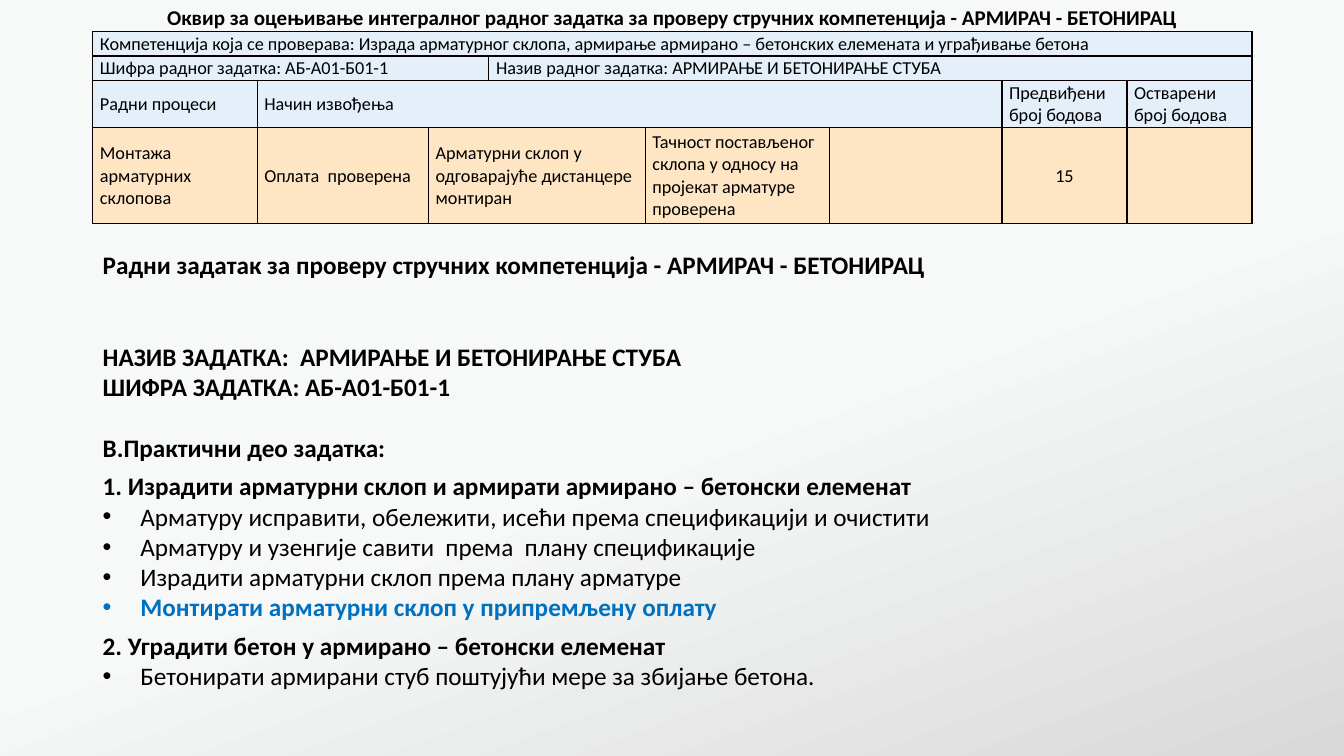
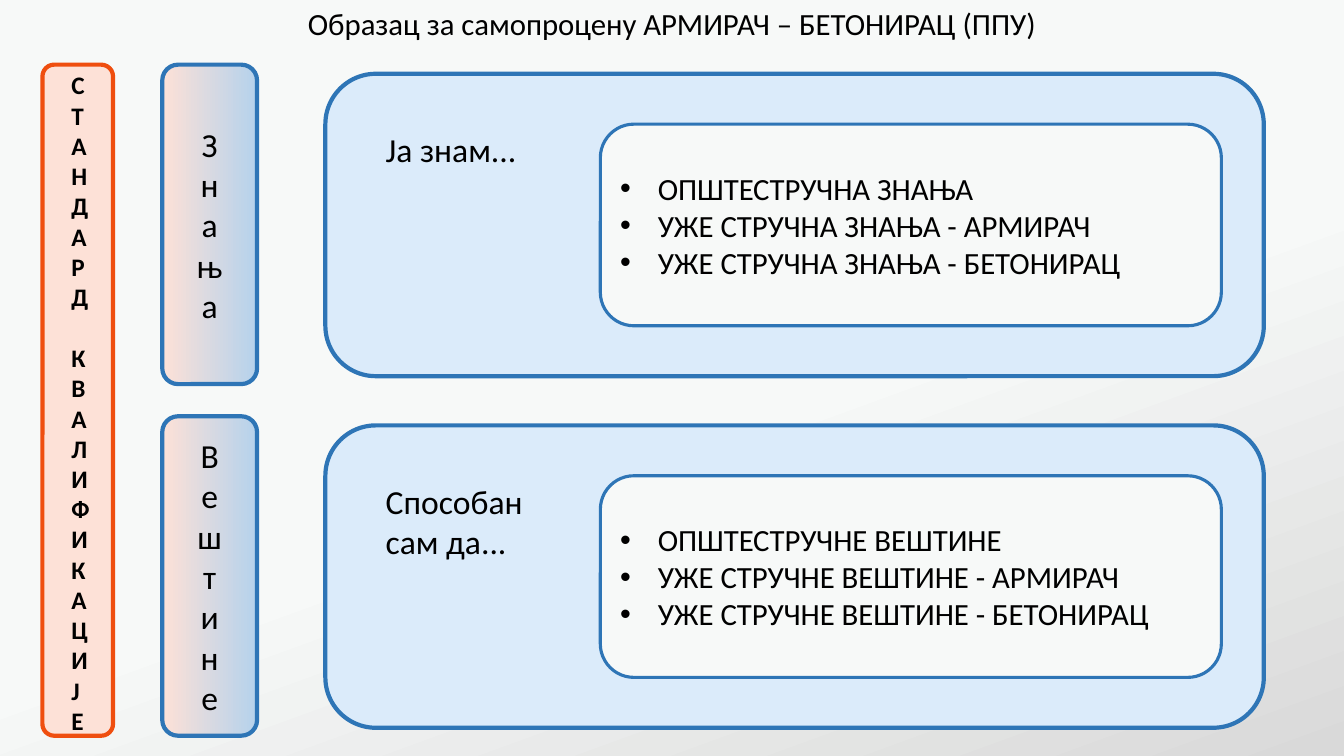
from lxml import etree
from pptx import Presentation
from pptx.dml.color import RGBColor
from pptx.enum.shapes import MSO_SHAPE as Shape
from pptx.enum.text import MSO_ANCHOR as Anchor, PP_ALIGN as Align
from pptx.oxml.ns import qn
from pptx.util import Cm, Pt

FONT = "Calibri"
COLORS = {
    "text": "000000", "highlight": "0070C0", "border": "080000",
    "back_dark": "D9D9D9", "back_light": "F7F9F8",
    "header": "E4EFF9", "process": "FEE6C5",
    "panel": "DBEBFA", "line": "2E75B6",
    "standard": "FDE1D7", "standard_line": "EF4E0F", "pillar_end": "B5D2EC",
}
SLIDE_WIDTH, SLIDE_HEIGHT = 33.87, 19.05
BULLET_INDENT = 0.95


# Shared helpers
def color(name):
    return RGBColor.from_string(COLORS[name])


def set_gradient(fill, stops, angle):
    fill.gradient()
    fill.gradient_angle = angle
    for stop, (name, position) in zip(fill.gradient_stops, stops):
        stop.color.rgb = color(name)
        stop.position = position


def add_slide(presentation):
    slide = presentation.slides.add_slide(presentation.slide_layouts[6])
    set_gradient(slide.background.fill,
                 [("back_dark", 0), ("back_light", 0.45)], 110)
    return slide


def format_paragraph(paragraph, size, bold=False, font_color="text",
                     align=Align.LEFT):
    paragraph.alignment = align
    for run in paragraph.runs:
        font = run.font
        font.name, font.size, font.bold = FONT, Pt(size), bold
        font.color.rgb = color(font_color)


def format_frame(frame, size, **style):
    frame.word_wrap = True
    for paragraph in frame.paragraphs:
        format_paragraph(paragraph, size, **style)


def add_bullet(paragraph):
    properties = paragraph._p.get_or_add_pPr()
    properties.set("marL", str(Cm(BULLET_INDENT)))
    properties.set("indent", str(-Cm(BULLET_INDENT)))
    etree.SubElement(properties, qn("a:buFont"), typeface="Arial")
    etree.SubElement(properties, qn("a:buChar"), char="•")


def add_text(slide, box, text, size, **style):
    frame = slide.shapes.add_textbox(*map(Cm, box)).text_frame
    frame.text = text
    format_frame(frame, size, **style)
    return frame


def add_box(slide, box, fill, line="line", line_width=3):
    shape = slide.shapes.add_shape(Shape.ROUNDED_RECTANGLE, *map(Cm, box))
    shape.shadow.inherit = False
    shape.fill.solid()
    shape.fill.fore_color.rgb = color(fill)
    shape.line.color.rgb = color(line)
    shape.line.width = Pt(line_width)
    shape.text_frame.vertical_anchor = Anchor.MIDDLE
    return shape


# Slide 1: assessment table
COLUMN_WIDTHS = [4.14, 4.32, 1.52, 3.94, 4.65, 4.34, 3.15, 3.15]
ROW_HEIGHTS = [0.65, 0.61, 0.61, 1.2, 2.42]
# Each cell: text, number of columns
TABLE_ROWS = [
    [("Оквир за оцењивање интегралног радног задатка за проверу стручних "
      "компетенција - АРМИРАЧ - БЕТОНИРАЦ", 8)],
    [("Компетенција која се проверава: Израда арматурног склопа, армирање "
      "армирано – бетонских елемената и уграђивање бетона", 8)],
    [("Шифра радног задатка: АБ-А01-Б01-1", 3),
     ("Назив радног задатка: АРМИРАЊЕ И БЕТОНИРАЊЕ СТУБА", 5)],
    [("Радни процеси", 1), ("Начин извођења", 5),
     ("Предвиђени број бодова", 1), ("Остварени број бодова", 1)],
    [("Монтажа арматурних склопова", 1), ("Оплата  проверена", 1),
     ("Арматурни склоп у одговарајуће дистанцере монтиран", 2),
     ("Тачност постављеног склопа у односу на пројекат арматуре проверена", 1),
     ("", 1), ("15", 1), ("", 1)],
]


def set_borders(cell, visible_sides):
    properties = cell._tc.get_or_add_tcPr()
    for side in "LRTB":
        line = etree.SubElement(properties, qn(f"a:ln{side}"), w=str(Pt(1)))
        if side in visible_sides:
            fill = etree.SubElement(line, qn("a:solidFill"))
            etree.SubElement(fill, qn("a:srgbClr"), val=COLORS["border"])
        else:
            etree.SubElement(line, qn("a:noFill"))


def format_cell(cell, row_index):
    is_title = row_index == 0
    set_borders(cell, "B" if is_title else "LRTB")
    if is_title:
        cell.fill.background()
    else:
        last = row_index == len(TABLE_ROWS) - 1
        cell.fill.solid()
        cell.fill.fore_color.rgb = color("process" if last else "header")
    cell.vertical_anchor = Anchor.MIDDLE
    cell.margin_left = cell.margin_right = Cm(0.18)
    cell.margin_top = cell.margin_bottom = 0
    centered = is_title or cell.text.isdigit()
    format_frame(cell.text_frame, 15 if is_title else 13, bold=is_title,
                 align=Align.CENTER if centered else Align.LEFT)


def add_assessment_table(slide, left, top):
    table = slide.shapes.add_table(
        len(ROW_HEIGHTS), len(COLUMN_WIDTHS), Cm(left), Cm(top),
        Cm(sum(COLUMN_WIDTHS)), Cm(sum(ROW_HEIGHTS))).table
    table.first_row = table.horz_banding = False
    for column, width in zip(table.columns, COLUMN_WIDTHS):
        column.width = Cm(width)
    for row_index, cells in enumerate(TABLE_ROWS):
        table.rows[row_index].height = Cm(ROW_HEIGHTS[row_index])
        column_index = 0
        for text, span in cells:
            cell = table.cell(row_index, column_index)
            cell.text = text
            if span > 1:
                cell.merge(table.cell(row_index, column_index + span - 1))
            column_index += span
        for cell in table.rows[row_index].cells:
            format_cell(cell, row_index)


# Slide 1: task description; each line: text, style, space before in points
TASK_LINES = [
    ("Радни задатак за проверу стручних компетенција - АРМИРАЧ - БЕТОНИРАЦ",
     "heading", 0),
    ("НАЗИВ ЗАДАТКА:  АРМИРАЊЕ И БЕТОНИРАЊЕ СТУБА", "heading", 44),
    ("ШИФРА ЗАДАТКА: АБ-А01-Б01-1", "heading", 0),
    ("B.Практични део задатка:", "heading", 22),
    ("1. Израдити арматурни склоп и армирати армирано – бетонски елеменат",
     "heading", 6),
    ("Арматуру исправити, обележити, исећи према спецификацији и очистити",
     "bullet", 0),
    ("Арматуру и узенгије савити  према  плану спецификације", "bullet", 0),
    ("Израдити арматурни склоп према плану арматуре", "bullet", 0),
    ("Монтирати арматурни склоп у припремљену оплату", "highlight", 0),
    ("2. Уградити бетон у армирано – бетонски елеменат", "heading", 6),
    ("Бетонирати армирани стуб поштујући мере за збијање бетона.",
     "bullet", 0),
]


def add_task(slide, box):
    text = "\n".join(line[0] for line in TASK_LINES)
    frame = add_text(slide, box, text, 18)
    for paragraph, (_, style, before) in zip(frame.paragraphs, TASK_LINES):
        format_paragraph(
            paragraph, 18, bold=style != "bullet",
            font_color="highlight" if style == "highlight" else "text")
        paragraph.space_before = Pt(before)
        if style != "heading":
            add_bullet(paragraph)


def build_task_slide(presentation):
    slide = add_slide(presentation)
    add_assessment_table(slide, 2.34, 0.15)
    add_task(slide, (2.34, 6.15, 26.42, 12.22))


# Slide 2: self-assessment
SELF_ASSESSMENT = [
    ("Знања", "Ја знам...",
     ["ОПШТЕСТРУЧНА ЗНАЊА", "УЖЕ СТРУЧНА ЗНАЊА - АРМИРАЧ",
      "УЖЕ СТРУЧНА ЗНАЊА - БЕТОНИРАЦ"]),
    ("Вештине", "Способан сам да...",
     ["ОПШТЕСТРУЧНЕ ВЕШТИНЕ", "УЖЕ СТРУЧНЕ ВЕШТИНЕ - АРМИРАЧ",
      "УЖЕ СТРУЧНЕ ВЕШТИНЕ - БЕТОНИРАЦ"]),
]
BAND_TOP, BAND_HEIGHT, BAND_PITCH = 1.63, 8.05, 8.86


def add_standard_bar(slide, left, top, width, height):
    add_box(slide, (left, top, width, height), "standard", "standard_line")
    # The narrow text box breaks the words into single letters
    text_width = 0.82
    frame = add_text(
        slide, (left + (width - text_width) / 2, top, text_width, height),
        "СТАНДАРД\nКВАЛИФИКАЦИЈЕ", 18, bold=True)
    frame.paragraphs[1].space_before = Pt(22)


def add_pillar(slide, box, word):
    pillar = add_box(slide, box, "standard")
    set_gradient(pillar.fill, [("standard", 0), ("pillar_end", 1)], 0)
    pillar.text_frame.text = "\n".join(word)
    format_frame(pillar.text_frame, 24, align=Align.CENTER)


def add_panel(slide, left, top, width, height, prompt, topics):
    padding, list_left = 1.27, 6.93
    add_box(slide, (left, top, width, height), "panel")
    add_text(slide, (left + padding, top + padding, 4.57, 2.3), prompt, 24)
    list_box = (left + list_left, top + padding,
                width - list_left - 1.07, height - 2 * padding)
    frame = add_box(slide, list_box, "back_light", line_width=2.25).text_frame
    frame.text = "\n".join(topics)
    format_frame(frame, 22)
    for paragraph in frame.paragraphs:
        add_bullet(paragraph)


def build_self_assessment_slide(presentation):
    slide = add_slide(presentation)
    add_text(slide, (0, 0, SLIDE_WIDTH, 1.2),
             "Образац за самопроцену АРМИРАЧ – БЕТОНИРАЦ (ППУ)", 22,
             align=Align.CENTER)
    add_standard_bar(slide, 1.07, BAND_TOP, 1.78, BAND_PITCH + BAND_HEIGHT)
    for index, (word, prompt, topics) in enumerate(SELF_ASSESSMENT):
        top = BAND_TOP + index * BAND_PITCH
        add_pillar(slide, (4.09, top, 2.39, BAND_HEIGHT), word)
        add_panel(slide, 8.2, top + 0.23, 23.65, 7.62, prompt, topics)


def main():
    presentation = Presentation()
    presentation.slide_width = Cm(SLIDE_WIDTH)
    presentation.slide_height = Cm(SLIDE_HEIGHT)
    build_task_slide(presentation)
    build_self_assessment_slide(presentation)
    presentation.save("out.pptx")


if __name__ == "__main__":
    main()
